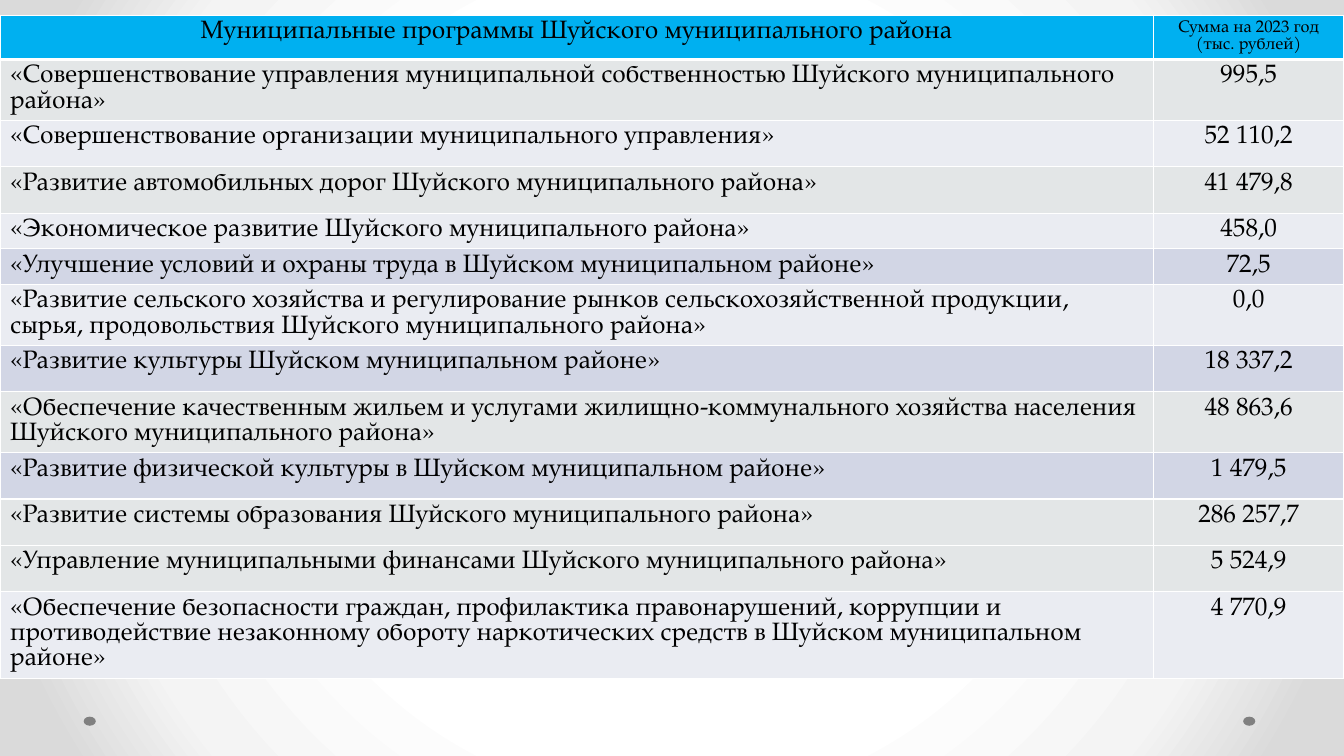
from lxml import etree
from pptx import Presentation
from pptx import util as u
from pptx.dml.color import RGBColor
from pptx.enum import shapes, text
from pptx.oxml import ns, parse_xml

BLACK = RGBColor(0x00, 0x00, 0x00)
WHITE = RGBColor(0xFF, 0xFF, 0xFF)
BLUE = RGBColor(0x00, 0xB0, 0xF0)
GREEN_GRAY = RGBColor(0xE3, 0xE6, 0xE7)
PALE = RGBColor(0xEA, 0xEC, 0xF2)
LAVENDER = RGBColor(0xD2, 0xD6, 0xE5)
DOT_GRAY = RGBColor(0x80, 0x80, 0x80)
BACKGROUND_STOPS = [
    (50, WHITE),
    (76, RGBColor(0xF4, 0xF4, 0xF4)),
    (92, RGBColor(0xDA, 0xDA, 0xDA)),
]

HEADER = ("Муниципальные программы Шуйского муниципального района",
          "Сумма на 2023 год (тыс. рублей)")
PROGRAMS = [
    ("«Совершенствование управления муниципальной собственностью Шуйского муниципального района»",
     "995,5", GREEN_GRAY, 0.6),
    ("«Совершенствование организации муниципального управления»",
     "52 110,2", PALE, 0.46),
    ("«Развитие автомобильных дорог Шуйского муниципального района»",
     "41 479,8", GREEN_GRAY, 0.46),
    ("«Экономическое развитие Шуйского муниципального района»",
     "458,0", PALE, 0.35),
    ("«Улучшение условий и охраны труда в Шуйском муниципальном районе»",
     "72,5", LAVENDER, 0.35),
    ("«Развитие сельского хозяйства и регулирование рынков сельскохозяйственной продукции, "
     "сырья, продовольствия Шуйского муниципального района»",
     "0,0", PALE, 0.6),
    ("«Развитие культуры Шуйском муниципальном районе»",
     "18 337,2", LAVENDER, 0.46),
    ("«Обеспечение качественным жильем и услугами жилищно-коммунального хозяйства населения "
     "Шуйского муниципального района»",
     "48 863,6", GREEN_GRAY, 0.6),
    ("«Развитие физической культуры в Шуйском муниципальном районе»",
     "1 479,5", LAVENDER, 0.46),
    ("«Развитие системы образования Шуйского муниципального района»",
     "286 257,7", GREEN_GRAY, 0.46),
    ("«Управление муниципальными финансами Шуйского муниципального района»",
     "5 524,9", GREEN_GRAY, 0.46),
    ("«Обеспечение безопасности граждан, профилактика правонарушений, коррупции и "
     "противодействие незаконному обороту наркотических средств в Шуйском муниципальном районе»",
     "4 770,9", PALE, 0.86),
]


class SlideBuilder:
    """Holds the text style and the current slide, and draws its elements."""

    font = "TeX Gyre Pagella"
    line_ratio = 1.01

    def __init__(self, slide):
        self.slide = slide

    def background(self, stops):
        self.slide.background.fill.solid()
        properties = self.slide.element.find(".//" + ns.qn("p:bgPr"))
        stop_list = "".join(
            f'<a:gs pos="{position * 1000}"><a:srgbClr val="{color}"/></a:gs>'
            for position, color in stops)
        gradient = parse_xml(
            f'<a:gradFill {ns.nsdecls("a")} rotWithShape="1"><a:gsLst>{stop_list}</a:gsLst>'
            '<a:path path="circle"><a:fillToRect l="50000" t="50000" r="50000" b="50000"/>'
            '</a:path></a:gradFill>')
        properties.replace(properties[0], gradient)

    def dot(self, left, top):
        shape = self.slide.shapes.add_shape(
            shapes.MSO_SHAPE.OVAL, u.Inches(left), u.Inches(top), u.Inches(0.12), u.Inches(0.09))
        shape.shadow.inherit = False
        shape.fill.solid()
        shape.fill.fore_color.rgb = DOT_GRAY
        shape.line.fill.background()

    def borders(self, cell, bottom_width):
        properties = cell._tc.get_or_add_tcPr()
        for side, width in (("L", 1), ("R", 1), ("T", 1), ("B", bottom_width)):
            line = etree.SubElement(properties, ns.qn(f"a:ln{side}"), w=str(u.Pt(width)))
            fill = etree.SubElement(line, ns.qn("a:solidFill"))
            etree.SubElement(fill, ns.qn("a:srgbClr"), val=str(WHITE))

    def cell(self, cell, words, size, color, centered, bottom_width=1):
        self.borders(cell, bottom_width)
        cell.fill.solid()
        cell.fill.fore_color.rgb = color
        paragraph = cell.text_frame.paragraphs[0]
        paragraph.alignment = text.PP_ALIGN.CENTER if centered else text.PP_ALIGN.LEFT
        paragraph.line_spacing = u.Pt(size * self.line_ratio)
        run = paragraph.add_run()
        run.text = words
        run.font.name = self.font
        run.font.size = u.Pt(size)
        run.font.color.rgb = BLACK

    def table(self, left, top, widths, header, programs):
        heights = [0.44] + [height for *_, height in programs]
        table = self.slide.shapes.add_table(
            len(heights), len(widths), u.Inches(left), u.Inches(top),
            u.Inches(sum(widths)), u.Inches(sum(heights))).table
        for column, width in zip(table.columns, widths):
            column.width = u.Inches(width)
        for row, height in zip(table.rows, heights):
            row.height = u.Inches(height)
        for column, (words, size) in enumerate(zip(header, (18, 12))):
            self.cell(table.cell(0, column), words, size, BLUE, True, 3)
        for row, (name, amount, color, _) in enumerate(programs, 1):
            self.cell(table.cell(row, 0), name, 18, color, False)
            self.cell(table.cell(row, 1), amount, 18, color, True)


def main():
    presentation = Presentation()
    presentation.slide_width = u.Inches(13.33)
    presentation.slide_height = u.Inches(7.5)
    builder = SlideBuilder(presentation.slides.add_slide(presentation.slide_layouts[6]))
    builder.background(BACKGROUND_STOPS)
    for left in (12.33, 0.83):
        builder.dot(left, 7.11)
    builder.table(0, 0.15, (11.44, 1.89), HEADER, PROGRAMS)
    presentation.save("out.pptx")


if __name__ == "__main__":
    main()
